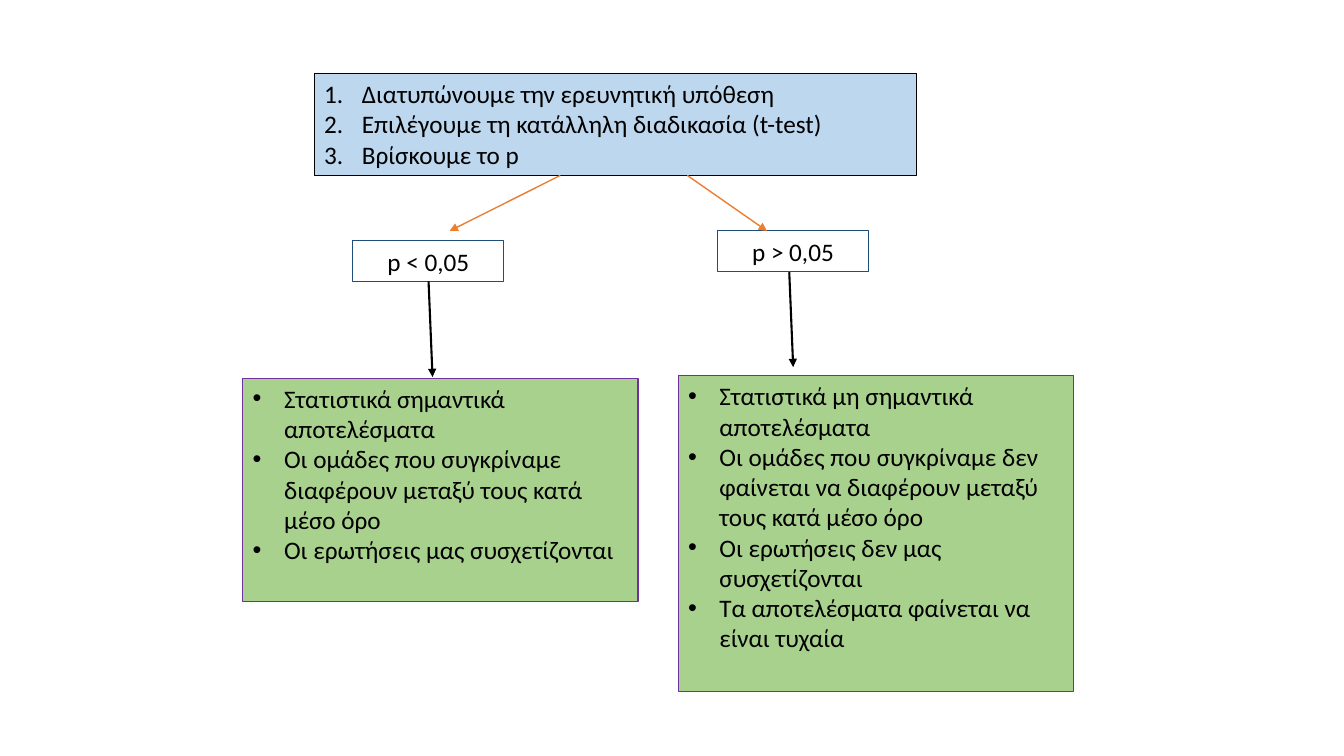
from lxml.etree import SubElement
from pptx import Presentation
from pptx.dml.color import RGBColor
from pptx.enum.shapes import MSO_CONNECTOR as Connector
from pptx.enum.text import MSO_ANCHOR as Anchor, PP_ALIGN as Align
from pptx.oxml.ns import qn
from pptx.util import Cm, Pt

BLACK, ORANGE, NAVY, PURPLE = "000000", "ED7D31", "1F4E79", "7030A0"
BLUE_FILL, GREEN_FILL = "BDD7EE", "A9D18E"

STEPS = [
    "Διατυπώνουμε την ερευνητική υπόθεση",
    "Επιλέγουμε τη κατάλληλη διαδικασία (t-test)",
    "Βρίσκουμε το p",
]
SIGNIFICANT = [
    "Στατιστικά σημαντικά αποτελέσματα",
    "Οι ομάδες που συγκρίναμε διαφέρουν μεταξύ τους κατά μέσο όρο",
    "Οι ερωτήσεις μας συσχετίζονται",
]
NOT_SIGNIFICANT = [
    "Στατιστικά μη σημαντικά αποτελέσματα",
    "Οι ομάδες που συγκρίναμε δεν φαίνεται να διαφέρουν μεταξύ τους κατά μέσο όρο",
    "Οι ερωτήσεις δεν μας συσχετίζονται",
    "Τα αποτελέσματα φαίνεται να είναι τυχαία",
]


def color(hex_value):
    """Turn a hex string into a colour."""
    return RGBColor.from_string(hex_value)


def add_marker(paragraph, numbered):
    """Give a paragraph a hanging number or bullet."""
    indent = Cm(0.95 if numbered else 0.79)
    properties = paragraph._p.get_or_add_pPr()
    properties.set("marL", str(indent))
    properties.set("indent", str(-indent))
    if numbered:
        SubElement(properties, qn("a:buFont"), typeface="+mj-lt")
        SubElement(properties, qn("a:buAutoNum"), type="arabicPeriod")
    else:
        SubElement(properties, qn("a:buFont"), typeface="Arial")
        SubElement(properties, qn("a:buChar"), char="•")


def add_box(slide, place, lines, border, fill=None):
    """Add a bordered box holding one paragraph per line and return its paragraphs."""
    box = slide.shapes.add_textbox(*map(Cm, place))
    box.line.color.rgb = color(border)
    box.line.width = Pt(0.75)
    if fill:
        box.fill.solid()
        box.fill.fore_color.rgb = color(fill)
    frame = box.text_frame
    frame.word_wrap = True
    frame.vertical_anchor = Anchor.TOP
    frame.text = "\n".join(lines)
    for paragraph in frame.paragraphs:
        for run in paragraph.runs:
            run.font.name = "Calibri"
            run.font.size = Pt(18)
            run.font.color.rgb = color(BLACK)
    return frame.paragraphs


def add_list(slide, place, lines, border, fill, numbered=False):
    """Add a filled box with a numbered or bulleted list."""
    for paragraph in add_box(slide, place, lines, border, fill):
        add_marker(paragraph, numbered)


def add_condition(slide, left, top, condition):
    """Add a small box with a centred condition on p."""
    for paragraph in add_box(slide, (left, top, 3.81, 1.02), [condition], NAVY):
        paragraph.alignment = Align.CENTER


def add_arrow(slide, start, end, stroke, width):
    """Add a straight arrow between two points."""
    arrow = slide.shapes.add_connector(Connector.STRAIGHT, *map(Cm, start + end))
    arrow.line.color.rgb = color(stroke)
    arrow.line.width = Pt(width)
    SubElement(arrow.line._get_or_add_ln(), qn("a:tailEnd"), type="triangle")
    SubElement(arrow._element.spPr, qn("a:effectLst"))


def main():
    """Build the decision diagram and save it."""
    deck = Presentation()
    deck.slide_width, deck.slide_height = Cm(33.87), Cm(19.05)
    slide = deck.slides.add_slide(deck.slide_layouts[6])

    add_condition(slide, 8.89, 6.07, "p < 0,05")
    add_condition(slide, 18.08, 5.82, "p > 0,05")
    add_arrow(slide, (10.8, 7.09), (10.9, 9.5), BLACK, 1.5)
    add_arrow(slide, (19.89, 6.86), (19.99, 9.25), BLACK, 1.5)
    add_list(slide, (6.12, 9.53, 9.96, 5.64), SIGNIFICANT, PURPLE, GREEN_FILL)
    add_list(slide, (17.09, 9.47, 9.96, 7.95), NOT_SIGNIFICANT, PURPLE, GREEN_FILL)
    add_list(slide, (7.92, 1.85, 15.19, 2.57), STEPS, BLACK, BLUE_FILL, numbered=True)
    add_arrow(slide, (14.12, 4.42), (11.33, 5.82), ORANGE, 1)
    add_arrow(slide, (17.32, 4.42), (19.33, 5.82), ORANGE, 1)

    deck.save("out.pptx")


if __name__ == "__main__":
    main()
